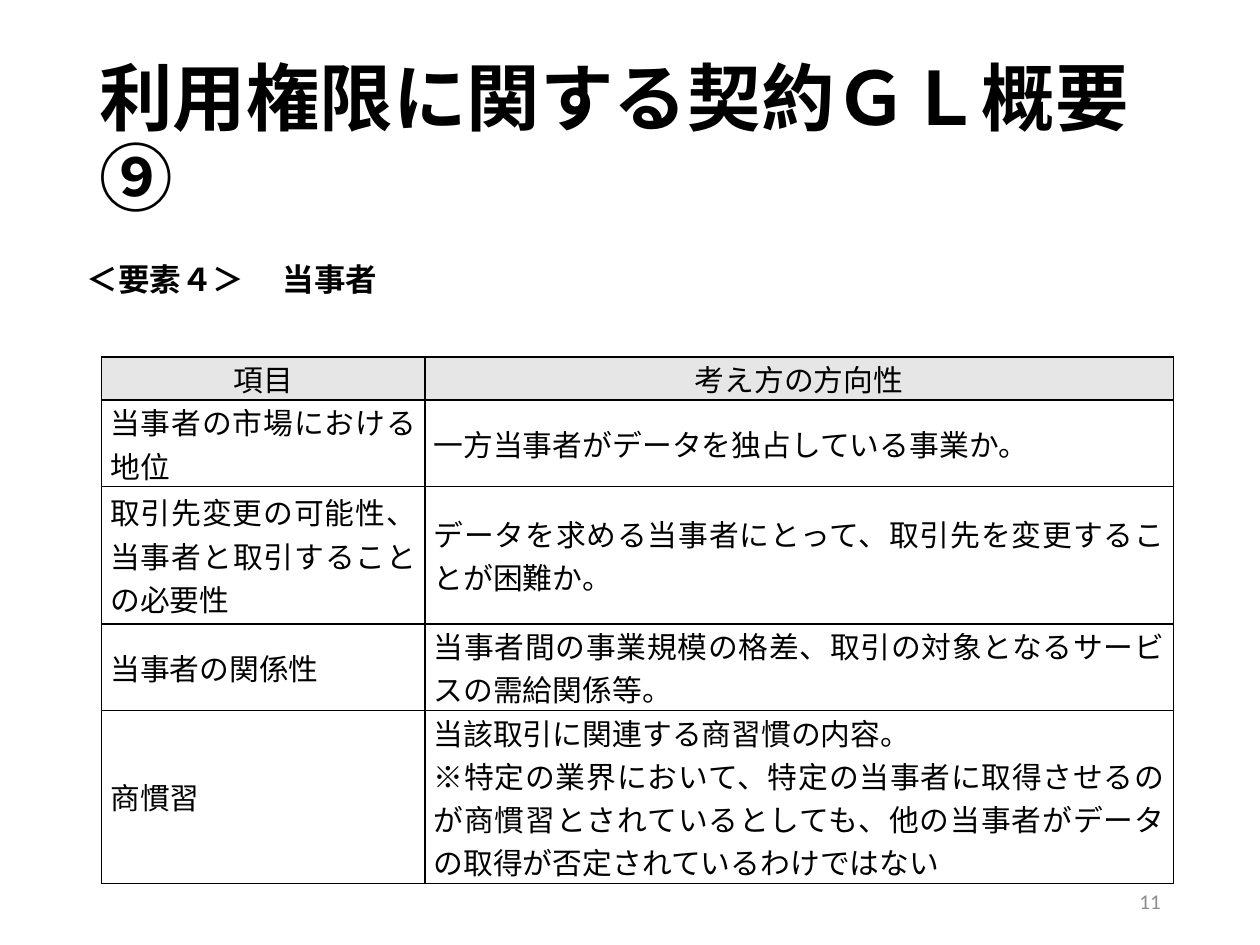
from lxml import etree
from pptx import Presentation
from pptx.dml.color import RGBColor
from pptx.enum.text import MSO_ANCHOR as Anchor, PP_ALIGN as Align
from pptx.oxml.ns import qn
from pptx.util import Pt

COLORS = {"ink": "000000", "header": "E7E6E6", "number": "8C8C8C"}
EAST_ASIAN_FONT = "Noto Sans CJK JP"

HEADINGS = ("項目", "考え方の方向性")
ITEMS = [
    ("当事者の市場における地位", "一方当事者がデータを独占している事業か。"),
    ("取引先変更の可能性、当事者と取引することの必要性",
     "データを求める当事者にとって、取引先を変更することが困難か。"),
    ("当事者の関係性",
     "当事者間の事業規模の格差、取引の対象となるサービスの需給関係等。"),
    ("商慣習",
     "当該取引に関連する商習慣の内容。\n"
     "※特定の業界において、特定の当事者に取得させるのが商慣習とされているとしても、"
     "他の当事者がデータの取得が否定されているわけではない"),
]
COLUMN_WIDTHS = (184.8, 427.7)
ROW_HEIGHTS = (24.7, 49.4, 78.6, 49.4, 98.9)


def write_text(frame, text, size, font="Calibri", color="ink", bold=False,
               align=Align.LEFT, anchor=Anchor.TOP, spacing=None):
    """Fill a text frame, one paragraph for each line of text."""
    frame.word_wrap = True
    frame.vertical_anchor = anchor
    for index, line in enumerate(text.split("\n")):
        para = frame.add_paragraph() if index else frame.paragraphs[0]
        para.alignment = align
        if spacing:
            para.line_spacing = spacing
        span = para.add_run()
        span.text = line
        span.font.size = Pt(size)
        span.font.name = font
        span.font.bold = bold
        span.font.color.rgb = RGBColor.from_string(COLORS[color])
        east_asian = etree.SubElement(span.font._element, qn("a:ea"))
        east_asian.set("typeface", EAST_ASIAN_FONT)


def add_text(page, box, text, size, **text_format):
    shape = page.shapes.add_textbox(*map(Pt, box))
    write_text(shape.text_frame, text, size, **text_format)


def draw_borders(cell, width=1):
    properties = cell._tc.get_or_add_tcPr()
    for index, side in enumerate(("lnL", "lnR", "lnT", "lnB")):
        line = etree.Element(qn(f"a:{side}"), w=str(Pt(width)))
        fill = etree.SubElement(line, qn("a:solidFill"))
        etree.SubElement(fill, qn("a:srgbClr"), val=COLORS["ink"])
        properties.insert(index, line)


def add_cell(cell, text, is_heading):
    cell.margin_left = cell.margin_right = Pt(5)
    cell.margin_top = cell.margin_bottom = 0
    cell.vertical_anchor = Anchor.MIDDLE
    if is_heading:
        cell.fill.solid()
        cell.fill.fore_color.rgb = RGBColor.from_string(COLORS["header"])
    else:
        cell.fill.background()
    write_text(cell.text_frame, text, 17,
               font="Cambria" if is_heading else EAST_ASIAN_FONT,
               align=Align.CENTER if is_heading else Align.JUSTIFY,
               anchor=Anchor.MIDDLE)
    draw_borders(cell)


def add_item_table(page, left, top):
    rows = [HEADINGS, *ITEMS]
    table = page.shapes.add_table(
        len(rows), len(HEADINGS), Pt(left), Pt(top),
        Pt(sum(COLUMN_WIDTHS)), Pt(sum(ROW_HEIGHTS))).table
    table.horz_banding = False
    for column, width in zip(table.columns, COLUMN_WIDTHS):
        column.width = Pt(width)
    for row, height in zip(table.rows, ROW_HEIGHTS):
        row.height = Pt(height)
    for row_index, texts in enumerate(rows):
        for column_index, text in enumerate(texts):
            add_cell(table.cell(row_index, column_index), text, row_index == 0)


def build_page(page):
    add_text(page, (49.7, 28.8, 620.6, 104.4), "利用権限に関する契約ＧＬ概要⑨", 42,
             bold=True, anchor=Anchor.MIDDLE, spacing=0.9)
    add_item_table(page, 58, 203.9)
    add_text(page, (42.5, 145, 199.4, 28.8), "＜要素４＞ 　当事者", 18, bold=True)
    add_text(page, (508.3, 500.4, 162, 28.8), "11", 12, color="number",
             align=Align.RIGHT, anchor=Anchor.MIDDLE)


def main():
    deck = Presentation()
    deck.slide_width, deck.slide_height = Pt(720), Pt(540)
    build_page(deck.slides.add_slide(deck.slide_layouts[6]))
    deck.save("out.pptx")


if __name__ == "__main__":
    main()
